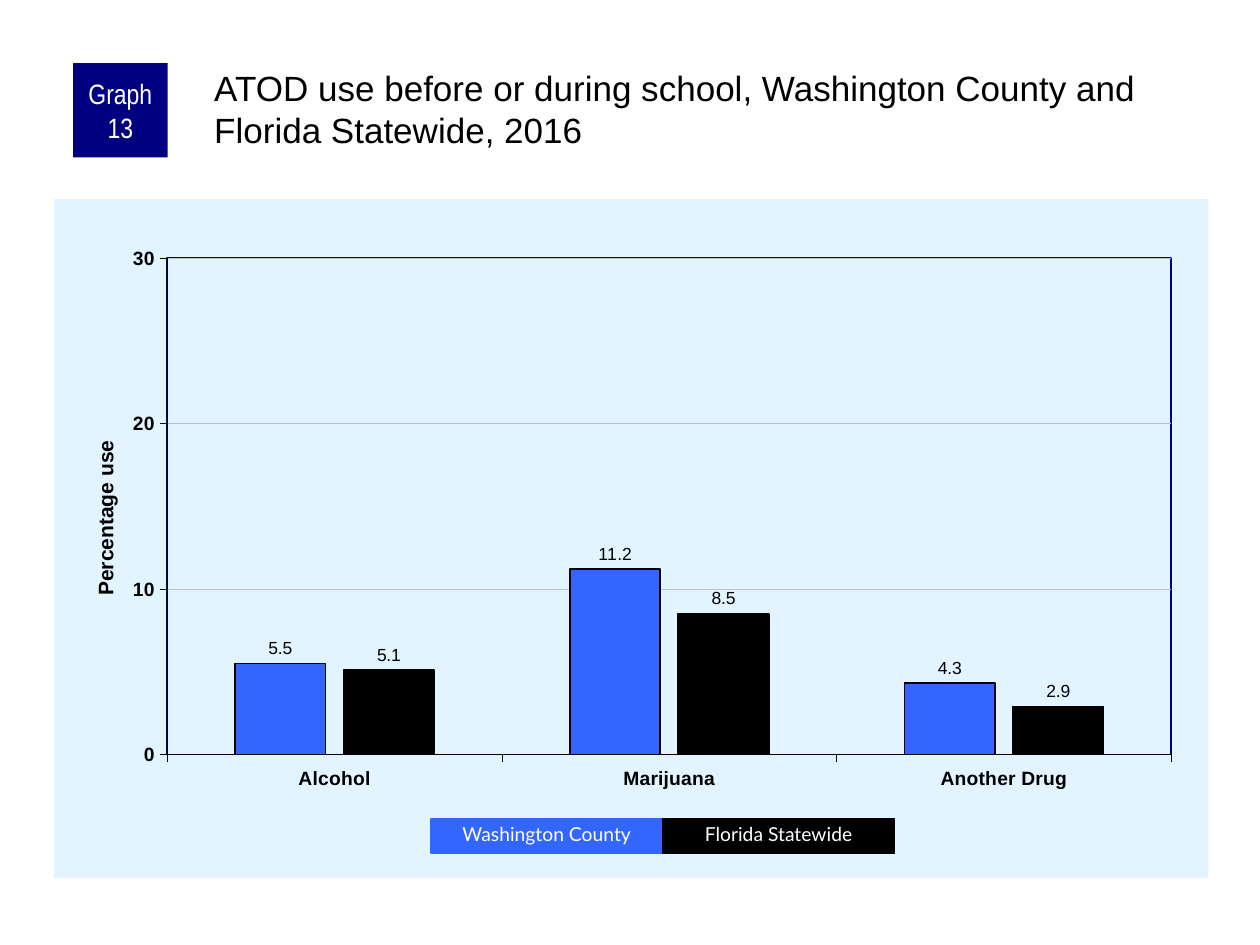
from lxml import etree
from pptx import Presentation
from pptx import util as u
from pptx.chart import data as chart_data
from pptx.dml.color import RGBColor
from pptx.enum import chart as charts, shapes, text
from pptx.oxml import parse_xml

C = "http://schemas.openxmlformats.org/drawingml/2006/chart"
A = "http://schemas.openxmlformats.org/drawingml/2006/main"
COLUMNS, ROWS = 100, 75


def color(target, value):
    if hasattr(target, "solid"):
        target.solid()
        target = target.fore_color
    target.rgb = RGBColor.from_string(value)


def layout(values, target=""):
    names = ("x", "y", "w", "h")[:len(values)]
    modes = "".join(f'<c:{n}Mode val="edge"/>' for n in ("x", "y"))
    sizes = "".join(f'<c:{n} val="{v}"/>' for n, v in zip(names, values))
    return parse_xml(f'<c:layout xmlns:c="{C}"><c:manualLayout>{target}{modes}{sizes}'
                     '</c:manualLayout></c:layout>')


deck = Presentation()
deck.slide_width, deck.slide_height = u.Inches(10), u.Inches(7.5)
column, row = deck.slide_width / COLUMNS, deck.slide_height / ROWS
page = deck.slides.add_slide(deck.slide_layouts[6])

usage = chart_data.CategoryChartData(number_format="0.0")
usage.categories = ["Alcohol", "Marijuana", "Another Drug"]
usage.add_series("Washington County", (5.5, 11.2, 4.3))
usage.add_series("Florida Statewide", (5.1, 8.5, 2.9))
frame = page.shapes.add_chart(
    charts.XL_CHART_TYPE.COLUMN_CLUSTERED,
    int(4.3 * column), int(15.8 * row), int(91.6 * column), int(53.9 * row), usage)
chart = frame.chart
chart.has_legend = False
chart.has_title = False
chart.font.name, chart.font.size = "Arial", u.Pt(11.5)
color(chart.font.color, "000000")

plot = chart.plots[0]
plot.gap_width, plot.overlap, plot.vary_by_categories = 150, -20, False
for series, fill in zip(plot.series, ("3366FF", "000000")):
    color(series.format.fill, fill)
    color(series.format.line.fill, "000000")
    series.format.line.width = u.Pt(1)
    labels = series.data_labels
    labels.show_value = True
    labels.number_format, labels.number_format_is_linked = "0.0", False
    labels.position = charts.XL_LABEL_POSITION.OUTSIDE_END
    labels.font.name, labels.font.size = "Arial", u.Pt(10)
    color(labels.font.color, "000000")

for axis in (chart.category_axis, chart.value_axis):
    axis.major_tick_mark = charts.XL_TICK_MARK.OUTSIDE
    axis.minor_tick_mark = charts.XL_TICK_MARK.NONE
    font = axis.tick_labels.font
    font.name, font.size, font.bold = "Arial", u.Pt(11), True
    color(font.color, "000000")
    color(axis.format.line.fill, "000000")
    axis.format.line.width = u.Pt(0.25)

percent = chart.value_axis
percent.minimum_scale, percent.maximum_scale, percent.major_unit = 0, 30, 10
percent.tick_labels.number_format = "0"
percent.tick_labels.number_format_is_linked = False
percent.has_major_gridlines = True
grid = percent.major_gridlines.format.line
color(grid.fill, "C0C0C0")
grid.width = u.Pt(0.25)
percent.has_title = True
span = percent.axis_title.text_frame.paragraphs[0].add_run()
span.text = "Percentage use"
span.font.name, span.font.size, span.font.bold = "Arial", u.Pt(12), True
color(span.font.color, "000000")
title = percent.axis_title.text_frame._txBody
title.find(f"{{{A}}}bodyPr").set("rot", "-5400000")
title.find(f"{{{A}}}bodyPr").set("vert", "horz")
heading = percent.axis_title.element
for old in heading.findall(f"{{{C}}}layout"):
    heading.remove(old)
heading.find(f"{{{C}}}tx").addnext(layout((0.03, 0.35)))

area = chart.element.find(f".//{{{C}}}plotArea")
for old in area.findall(f"{{{C}}}layout"):
    area.remove(old)
area.insert(0, layout((0.098, 0.087, 0.87, 0.731), '<c:layoutTarget val="inner"/>'))
area.append(parse_xml(
    f'<c:spPr xmlns:c="{C}" xmlns:a="{A}"><a:noFill/><a:ln w="12700"><a:solidFill>'
    '<a:srgbClr val="000080"/></a:solidFill></a:ln></c:spPr>'))
chart.element.find(f"{{{C}}}chart").addnext(parse_xml(
    f'<c:spPr xmlns:c="{C}" xmlns:a="{A}"><a:solidFill><a:srgbClr val="E1F4FF"/>'
    '</a:solidFill><a:ln><a:noFill/></a:ln></c:spPr>'))

badge = (5.8, 5, 7.5, 7.5, "000080", None, "Graph 13", "Arial Narrow", 16)
keys = [(34.2 + 18.4 * i, 65, 18.4, 2.7, fill, fill, name, "Lato", 11)
        for i, (name, fill) in enumerate((("Washington County", "3366FF"),
                                          ("Florida Statewide", "000000")))]
for left, top, width, height, fill, line, words, face, size in [badge, *keys]:
    box = page.shapes.add_shape(shapes.MSO_SHAPE.RECTANGLE, int(left * column), int(top * row),
                                int(width * column), int(height * row))
    box.shadow.inherit = False
    color(box.fill, fill)
    body = box.text_frame
    body.word_wrap = True
    para = body.paragraphs[0]
    para.alignment = text.PP_ALIGN.CENTER
    if line:
        color(box.line.fill, line)
        box.line.width = u.Pt(0.75)
        body.vertical_anchor = text.MSO_ANCHOR.TOP
        body.auto_size = text.MSO_AUTO_SIZE.SHAPE_TO_FIT_TEXT
        para.line_spacing = 0.9
    else:
        box.line.fill.background()
        body.vertical_anchor = text.MSO_ANCHOR.MIDDLE
        body.margin_left = body.margin_right = u.Inches(0.05)
        body.margin_top = body.margin_bottom = 0
    span = para.add_run()
    span.text = words
    span.font.name, span.font.size = face, u.Pt(size)
    color(span.font.color, "FFFFFF")

box = page.shapes.add_textbox(int(16.7 * column), int(5 * row), int(79.2 * column), int(8.3 * row))
body = box.text_frame
body.word_wrap = True
body.margin_left = body.margin_top = u.Inches(0.03)
body.margin_right = body.margin_bottom = 0
span = body.paragraphs[0].add_run()
span.text = "ATOD use before or during school, Washington County and Florida Statewide, 2016"
span.font.name, span.font.size = "Arial", u.Pt(20)
color(span.font.color, "000000")

deck.save("out.pptx")
